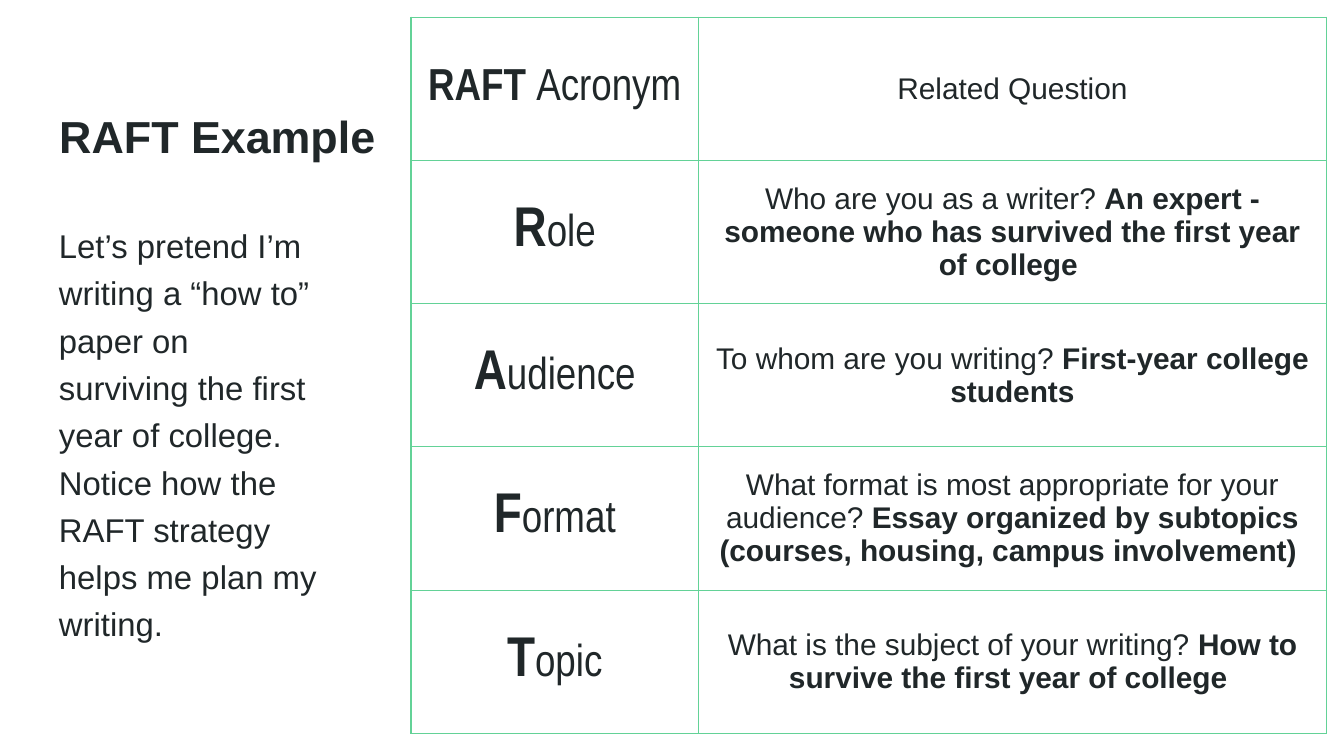
from lxml.etree import SubElement
from pptx import Presentation
from pptx.dml.color import RGBColor
from pptx.enum.text import MSO_ANCHOR, MSO_AUTO_SIZE, PP_ALIGN
from pptx.oxml.ns import qn
from pptx.util import Pt

COLORS = {"ink": "202729", "rule": "63D297"}
INSET = Pt(7.2)
EDGES = ("left", "top", "right", "bottom")

BODY = (
    "Let’s pretend I’m writing a “how to” paper on surviving the first year "
    "of college. Notice how the RAFT strategy helps me plan my writing. "
)

# Lead, rest of the word, question, answer
ROWS = [
    ("R", "ole", "Who are you as a writer? ",
     "An expert - someone who has survived the first year of college "),
    ("A", "udience", "To whom are you writing? ",
     "First-year college students"),
    ("F", "ormat", "What format is most appropriate for your audience? ",
     "Essay organized by subtopics (courses, housing, campus involvement) "),
    ("T", "opic", "What is the subject of your writing? ",
     "How to survive the first year of college "),
]


def apply(item, **values):
    for name, value in values.items():
        setattr(item, name, value)


def add_run(para, text, size, bold=False, face="Arial"):
    run = para.add_run()
    run.text = text
    apply(run.font, size=Pt(size), bold=bold, name=face)
    run.font.color.rgb = RGBColor.from_string(COLORS["ink"])


def set_frame(frame, anchor):
    apply(frame, word_wrap=True, auto_size=MSO_AUTO_SIZE.NONE,
          vertical_anchor=anchor)
    apply(frame, **{f"margin_{edge}": INSET for edge in EDGES})


def add_title(slide, text):
    title = slide.shapes.title
    apply(title, left=Pt(24.5), top=Pt(34.5), width=Pt(211), height=Pt(60))
    set_frame(title.text_frame, MSO_ANCHOR.BOTTOM)
    para = title.text_frame.paragraphs[0]
    para.alignment = PP_ALIGN.LEFT
    add_run(para, text, 24, True)


def add_body(slide, text):
    box = slide.shapes.add_textbox(Pt(24.5), Pt(109.5), Pt(154), Pt(260.5))
    set_frame(box.text_frame, MSO_ANCHOR.TOP)
    para = box.text_frame.paragraphs[0]
    apply(para, line_spacing=1.2, space_after=Pt(12))
    add_run(para, text, 17.6)


def add_rules(cell):
    props = cell._tc.get_or_add_tcPr()
    for place, tag in enumerate(("a:lnL", "a:lnR", "a:lnT", "a:lnB")):
        line = props.makeelement(qn(tag), {"w": str(Pt(0.75))})
        fill = SubElement(line, qn("a:solidFill"))
        SubElement(fill, qn("a:srgbClr"), val=COLORS["rule"])
        props.insert(place, line)


def fill_cell(cell, *runs):
    apply(cell, vertical_anchor=MSO_ANCHOR.MIDDLE)
    apply(cell, **{f"margin_{edge}": INSET for edge in EDGES})
    cell.fill.background()
    add_rules(cell)
    para = cell.text_frame.paragraphs[0]
    para.alignment = PP_ALIGN.CENTER
    for run in runs:
        add_run(para, *run)


def add_grid(slide):
    widths, height = (154, 336.5), 76.75
    count = len(ROWS) + 1
    frame = slide.shapes.add_table(count, 2, Pt(220.2), Pt(9.2),
                                   Pt(sum(widths)), Pt(height * count))
    table = frame.table
    apply(table, first_row=False, horz_banding=False)
    for column, width in zip(table.columns, widths):
        column.width = Pt(width)
    for row in table.rows:
        row.height = Pt(height)

    # Header row
    narrow = "Arial Narrow"
    fill_cell(table.cell(0, 0), ("RAFT ", 24, True, narrow),
              ("Acronym", 24, False, narrow))
    fill_cell(table.cell(0, 1), ("Related Question", 16))

    # One row for each letter
    for i, (lead, rest, query, reply) in enumerate(ROWS, 1):
        fill_cell(table.cell(i, 0), (lead, 30, True, narrow),
                  (rest, 24, False, narrow))
        fill_cell(table.cell(i, 1), (query, 16), (reply, 16, True))


def main():
    deck = Presentation()
    apply(deck, slide_width=Pt(720), slide_height=Pt(405))
    slide = deck.slides.add_slide(deck.slide_layouts[5])
    add_title(slide, "RAFT Example")
    add_body(slide, BODY)
    add_grid(slide)
    deck.save("out.pptx")


if __name__ == "__main__":
    main()
